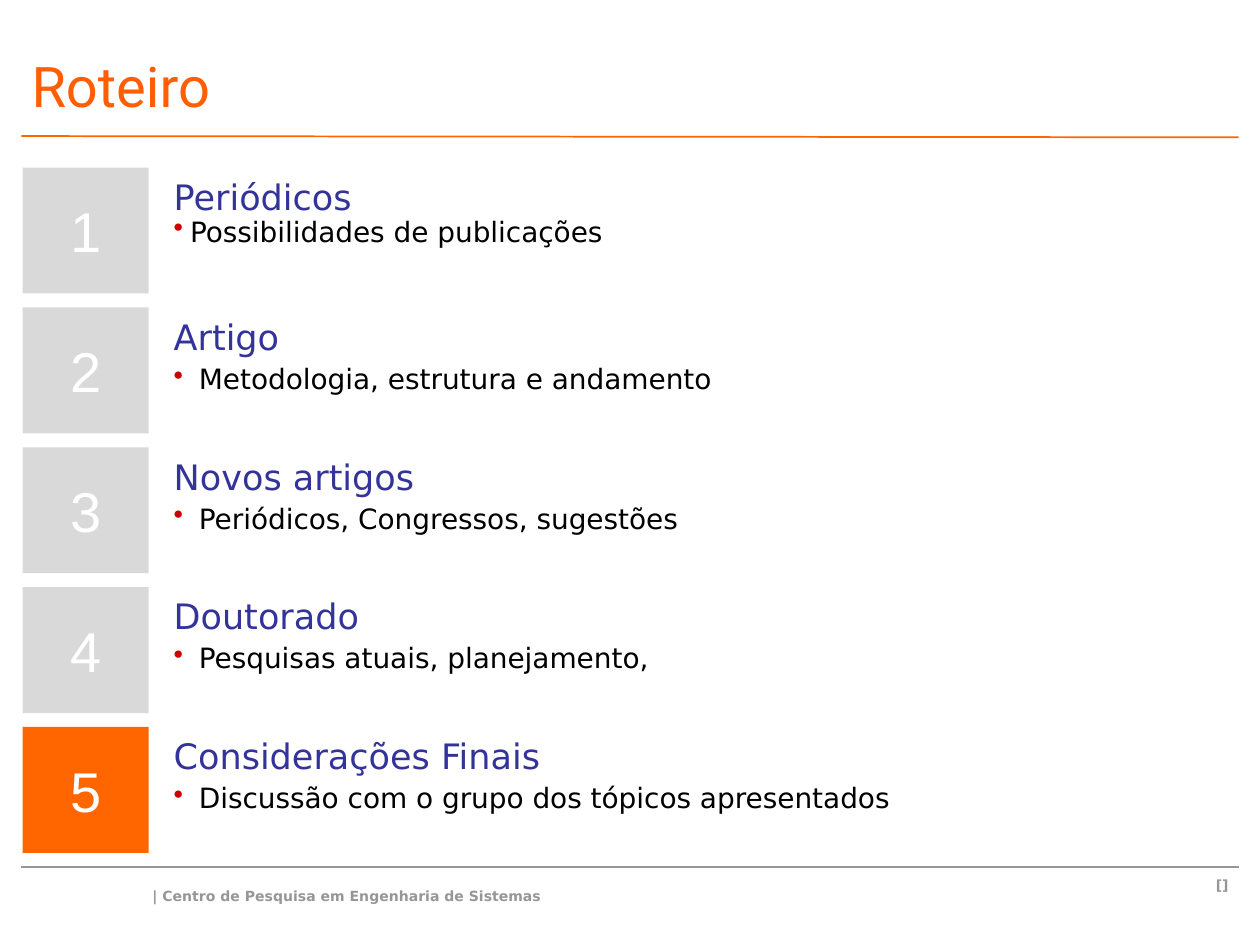
from dataclasses import dataclass

import pptx
import pptx.dml.color
import pptx.enum.shapes
import pptx.enum.text
import pptx.oxml.ns
import pptx.util
from lxml import etree

Inches, Pt = pptx.util.Inches, pptx.util.Pt
RGB = pptx.dml.color.RGBColor
ALIGN, ANCHOR = pptx.enum.text.PP_ALIGN, pptx.enum.text.MSO_ANCHOR
qn = pptx.oxml.ns.qn

COLORS = {
    "title": "FF5E05", "accent": "FF6600", "idle": "D9D9D9", "number": "FFFFFF",
    "heading": "333399", "detail": "000000", "bullet": "CC0000", "footer": "969696",
}
FONTS = {
    "title": {"name": "Roboto", "size": Pt(32)},
    "number": {"name": "Arial", "size": Pt(32)},
    "heading": {"name": "DejaVu Sans", "size": Pt(20)},
    "detail": {"name": "DejaVu Sans", "size": Pt(16)},
    "footer": {"name": "DejaVu Sans", "size": Pt(8), "bold": True},
}
TOP, PITCH, BOX = 1.33, 1.11, 1.0
CURRENT = 5


@dataclass
class Topic:
    heading: str
    detail: str
    indent: float = 0.2
    gap: float = 4.2


TOPICS = [
    Topic("Periódicos", "Possibilidades de publicações", indent=0.13, gap=0),
    Topic("Artigo", "Metodologia, estrutura e andamento"),
    Topic("Novos artigos", "Periódicos, Congressos, sugestões"),
    Topic("Doutorado", "Pesquisas atuais, planejamento,"),
    Topic("Considerações Finais", "Discussão com o grupo dos tópicos apresentados"),
]


def set_frame(tf, insets: tuple, anchor=ANCHOR.TOP, wrap: bool = True) -> None:
    sides = ("margin_left", "margin_top", "margin_right", "margin_bottom")
    values = dict(zip(sides, map(Inches, insets)))
    for name, value in (values | {"vertical_anchor": anchor, "word_wrap": wrap}).items():
        setattr(tf, name, value)


def write(p, text: str, style: str, indent: tuple = (0, 0), **formats) -> None:
    """Fill one paragraph; indent is left margin and first-line offset."""
    r = p.add_run()
    r.text = text
    for name, value in FONTS[style].items():
        setattr(r.font, name, value)
    r.font.color.rgb = RGB.from_string(COLORS[style])
    for name, value in formats.items():
        setattr(p, name, value)
    pPr = p._p.get_or_add_pPr()
    pPr.set("marL", str(Inches(indent[0])))
    pPr.set("indent", str(Inches(indent[1])))


def add_bullet(p) -> None:
    pPr = p._p.get_or_add_pPr()
    clr = etree.SubElement(pPr, qn("a:buClr"))
    etree.SubElement(clr, qn("a:srgbClr"), val=COLORS["bullet"])
    etree.SubElement(pPr, qn("a:buChar"), char="•")


def add_text(s, at: tuple, text: str, style: str, insets: tuple,
             anchor=ANCHOR.TOP, **formats) -> None:
    tf = s.shapes.add_textbox(*map(Inches, at)).text_frame
    set_frame(tf, insets, anchor)
    write(tf.paragraphs[0], text, style, (0.04, 0), **formats)


def add_rule(s, y1: float, y2: float, color: str) -> None:
    line = s.shapes.add_connector(
        pptx.enum.shapes.MSO_CONNECTOR.STRAIGHT,
        Inches(0.17), Inches(y1), Inches(9.83), Inches(y2))
    line.line.color.rgb = RGB.from_string(COLORS[color])
    line.line.width = Pt(1)
    etree.SubElement(line._element.spPr, qn("a:effectLst"))


def add_topic(s, number: int, topic: Topic) -> None:
    top = Inches(TOP + PITCH * (number - 1))
    insets = (0.1,) * 4

    # Number box
    sp = s.shapes.add_shape(pptx.enum.shapes.MSO_SHAPE.RECTANGLE,
                            Inches(0.18), top, Inches(BOX), Inches(BOX))
    sp.shadow.inherit = False
    sp.fill.solid()
    fill = "accent" if number == CURRENT else "idle"
    sp.fill.fore_color.rgb = RGB.from_string(COLORS[fill])
    sp.line.fill.background()
    set_frame(sp.text_frame, insets, ANCHOR.MIDDLE, wrap=False)
    write(sp.text_frame.paragraphs[0], str(number), "number", alignment=ALIGN.CENTER)

    # Heading and bulleted detail
    tf = s.shapes.add_textbox(Inches(1.28), top, Inches(8.45), Inches(BOX)).text_frame
    set_frame(tf, insets)
    write(tf.paragraphs[0], topic.heading, "heading", (0.13, -0.13), line_spacing=0.9)
    p = tf.add_paragraph()
    write(p, topic.detail, "detail", (topic.indent, -topic.indent),
          line_spacing=0.9, space_before=Pt(topic.gap))
    add_bullet(p)


def main() -> None:
    prs = pptx.Presentation()
    prs.slide_width, prs.slide_height = Inches(10), Inches(7.5)
    s = prs.slides.add_slide(prs.slide_layouts[6])

    # Footer
    add_text(s, (9.38, 6.96, 0.64, 0.25), "[]", "footer", (0, 0, 0.04, 0),
             alignment=ALIGN.CENTER)
    add_text(s, (1.17, 7.04, 3.43, 0.25), "| Centro de Pesquisa em Engenharia de Sistemas",
             "footer", (0, 0, 0.04, 0), space_before=Pt(5))

    # Rules and title
    add_rule(s, 1.08, 1.09, "accent")
    add_rule(s, 6.88, 6.88, "footer")
    add_text(s, (0.15, 0, 9.68, 1), "Roteiro", "title", (0.06, 0.06, 0.14, 0.06),
             ANCHOR.BOTTOM)

    # Agenda
    for number, topic in enumerate(TOPICS, 1):
        add_topic(s, number, topic)

    prs.save("out.pptx")


if __name__ == "__main__":
    main()
